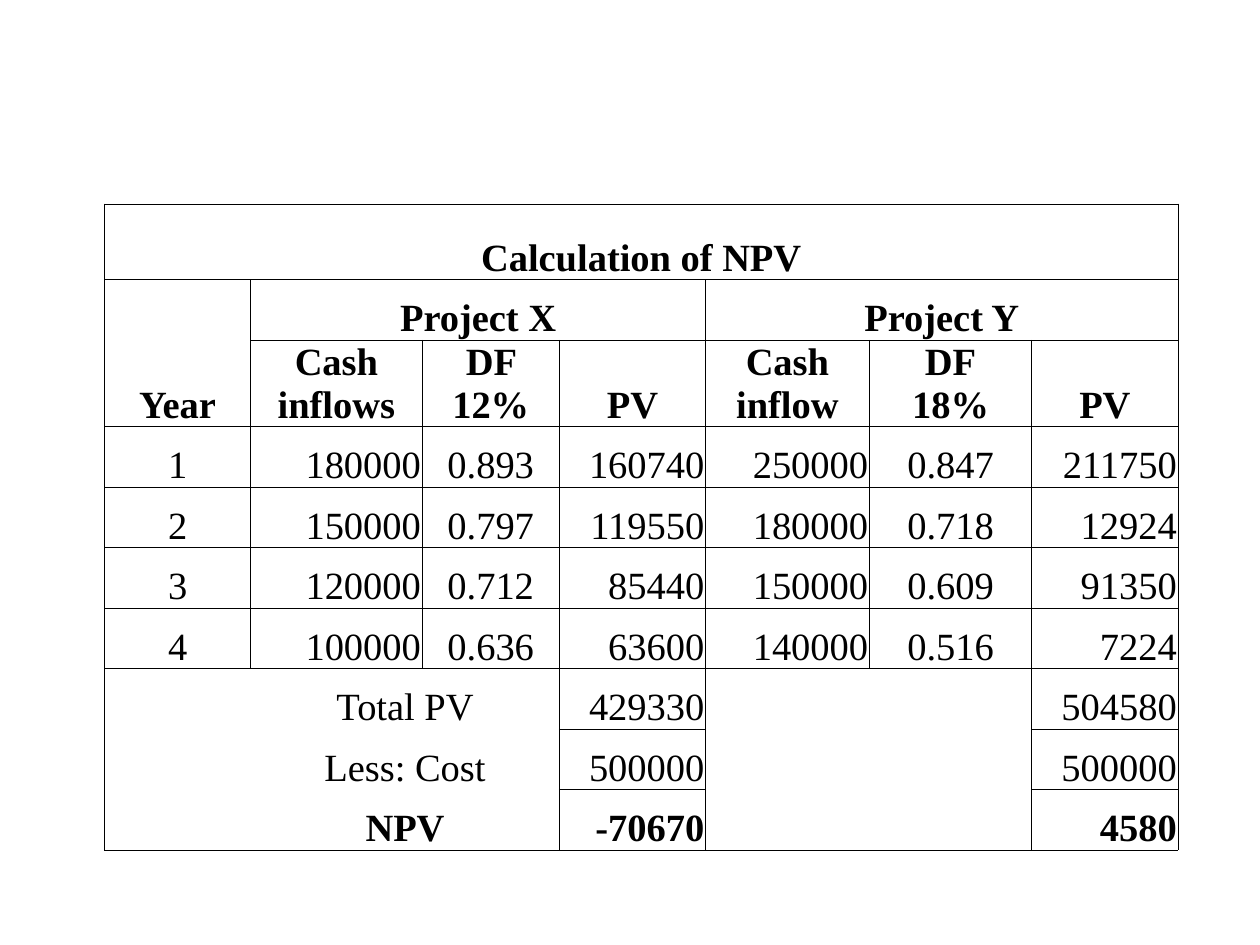
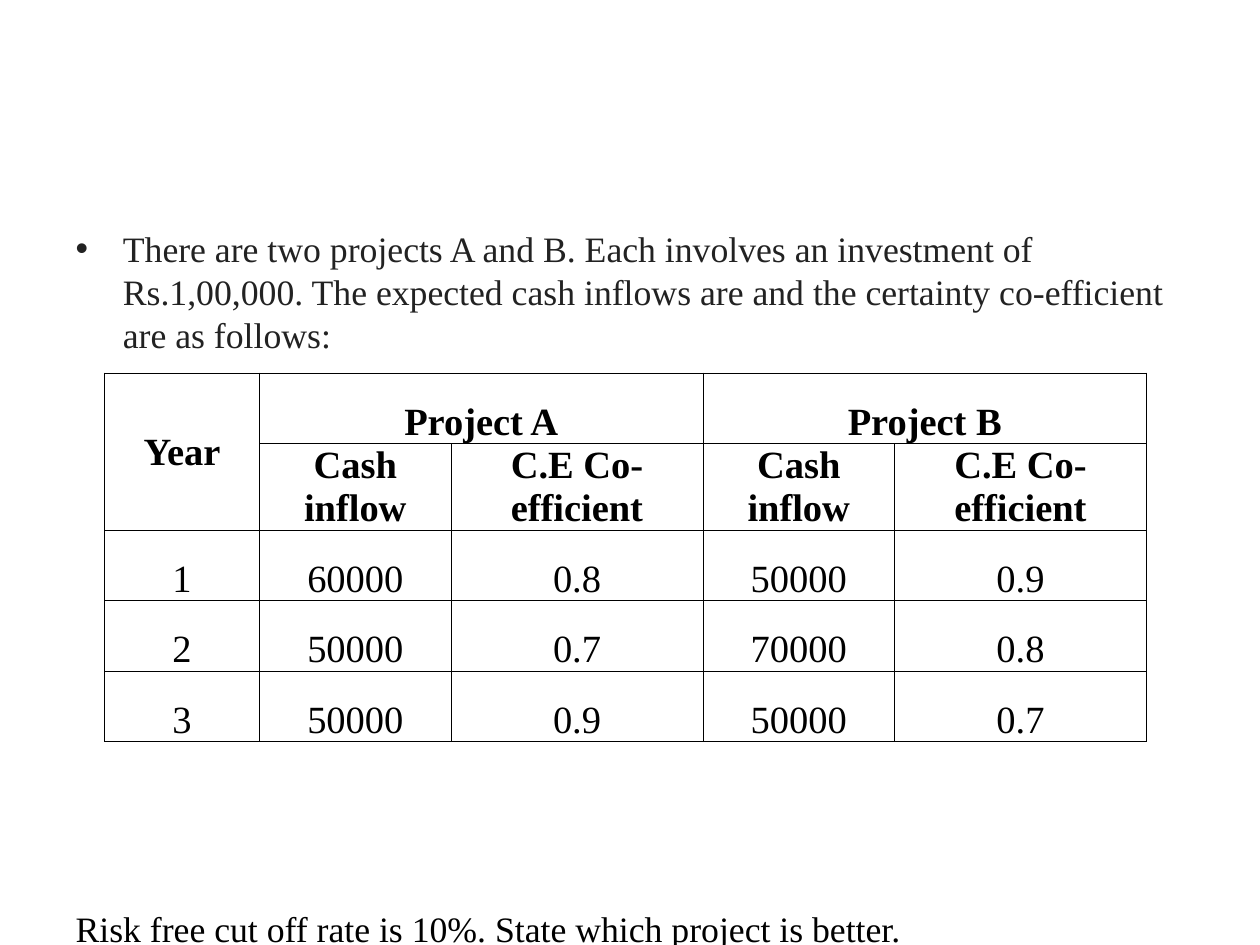
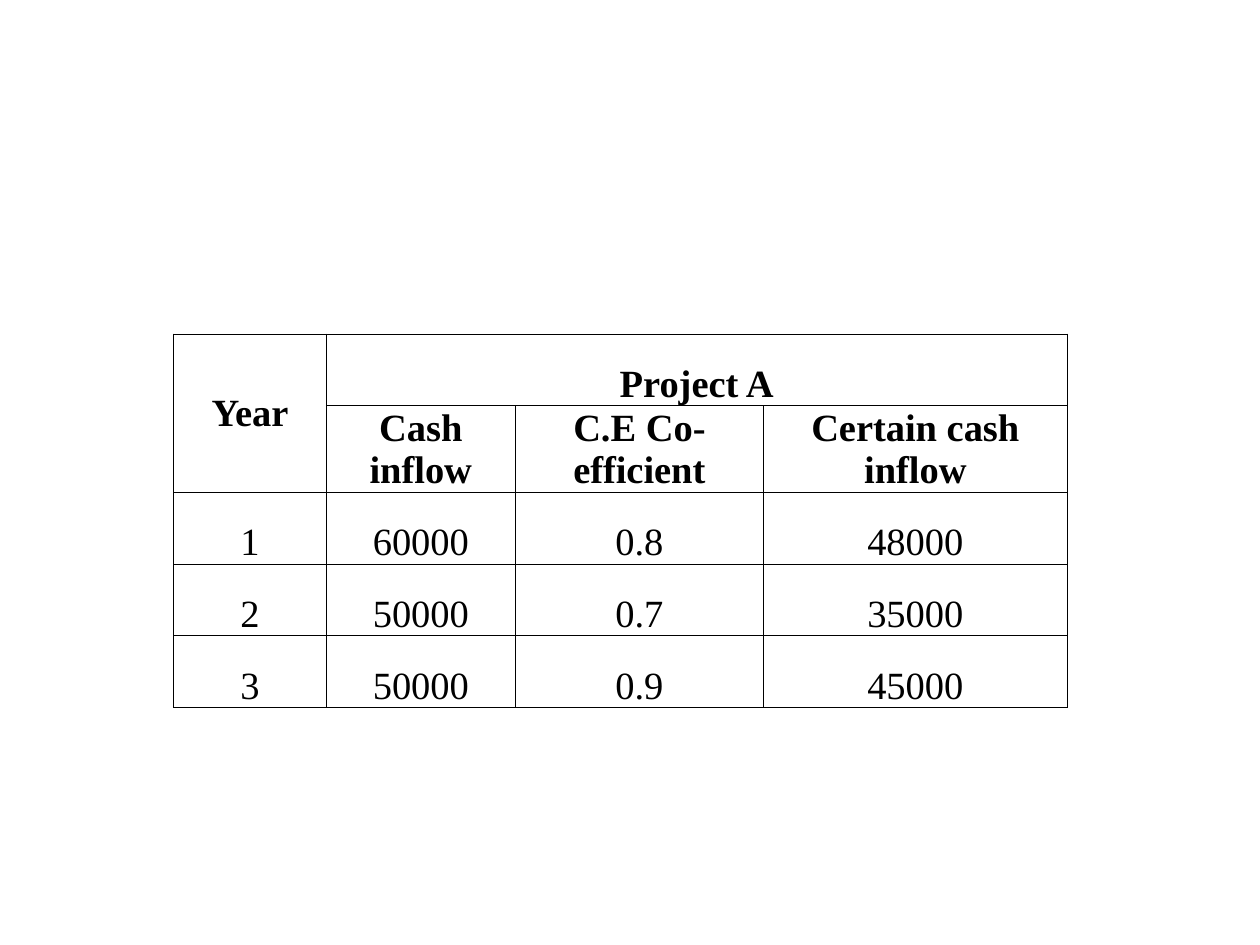
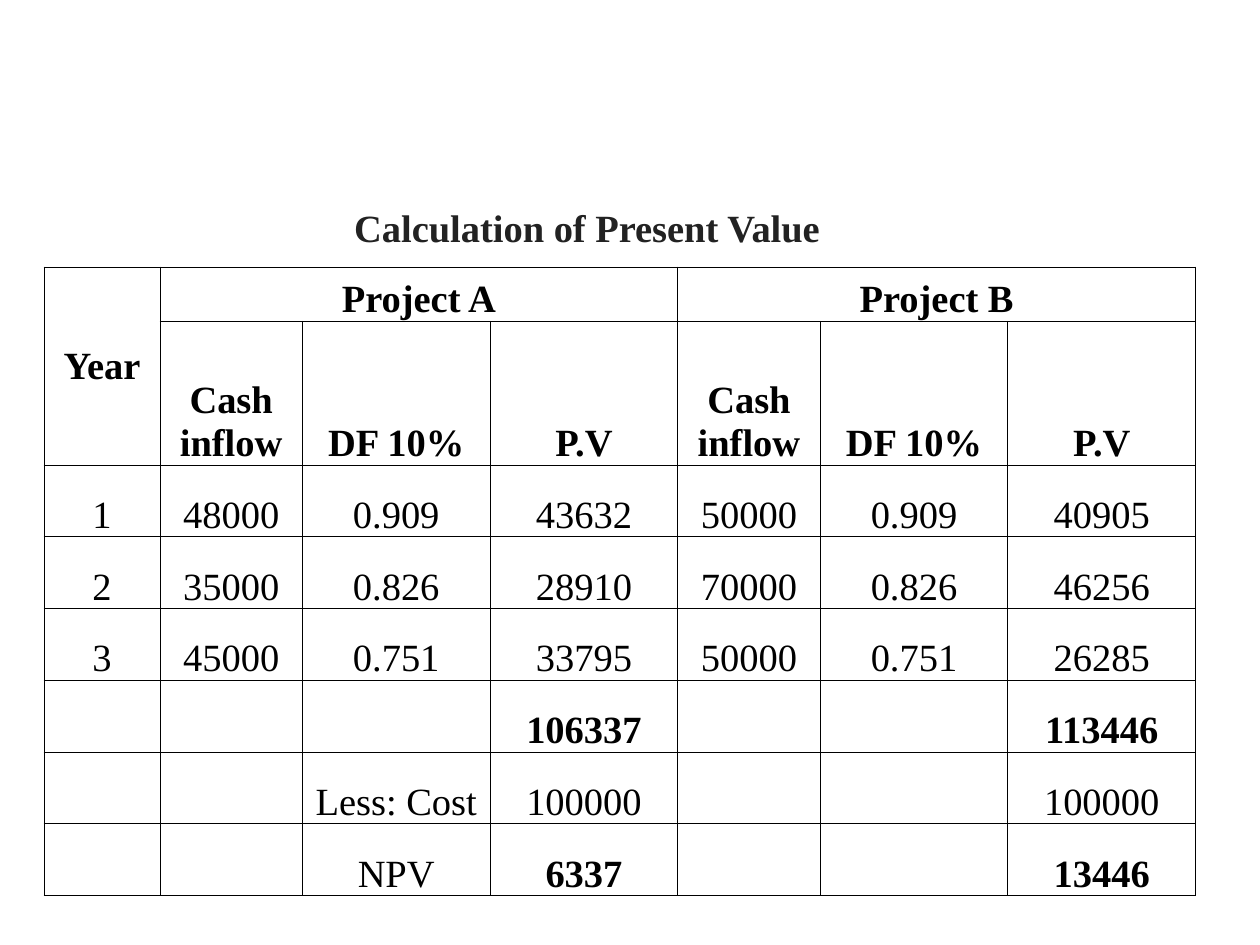
from dataclasses import dataclass

from lxml import etree
from pptx import Presentation
from pptx.dml.color import RGBColor as Rgb
from pptx.enum.text import MSO_ANCHOR as Anchor, MSO_AUTO_SIZE as Fit, PP_ALIGN as Align
from pptx.oxml.ns import qn
from pptx.util import Inches, Pt

COLORS = {"ink": "000000", "soft": "222222"}
FACE = "Times New Roman"
PLAIN_GRID = "{2D5ABB26-0587-4C30-8999-92F81FD0307C}"
PADS = {"margin_left": 0.01, "margin_right": 0.01, "margin_top": 0.01, "margin_bottom": 0}
TITLE_ONLY, CONTENT, BLANK = 5, 1, 6

Block = tuple[int, int, int, int]  # first row, first column, last row, last column


@dataclass
class Grid:
    left: float
    top: float
    cols: list[float]
    rows: list[float]
    text: list[str]
    spans: list[Block]
    head: int = 2
    bold: tuple[tuple[int, int], ...] = ()
    right: tuple[int, ...] = ()
    open: tuple[Block, ...] = ()
    year: Anchor = Anchor.MIDDLE


def style(para, size: float, color: str = "ink", bold: bool = False) -> None:
    values = {"name": FACE, "size": Pt(size), "bold": bold}
    for name, value in values.items():
        setattr(para.font, name, value)
    para.font.color.rgb = Rgb.from_string(COLORS[color])


def place(shape, left: float, top: float, width: float, height: float) -> None:
    box = {"left": left, "top": top, "width": width, "height": height}
    for name, value in box.items():
        setattr(shape, name, Inches(value))
    shape.text_frame.auto_size = Fit.NONE
    shape.text_frame.word_wrap = True


def rule(cell, row: int, col: int, blocks: tuple[Block, ...]) -> None:
    """Draw the cell's edges, save those that lie inside an open block."""
    high = cell.span_height if cell.is_merge_origin else 1
    wide = cell.span_width if cell.is_merge_origin else 1
    sides = {"lnL": (row, col - 1), "lnR": (row, col + wide),
             "lnT": (row - 1, col), "lnB": (row + high, col)}

    def within(spot: tuple[int, int], block: Block) -> bool:
        return block[0] <= spot[0] <= block[2] and block[1] <= spot[1] <= block[3]

    props = cell._tc.get_or_add_tcPr()
    for tag, near in sides.items():
        line = etree.SubElement(props, qn(f"a:{tag}"), w=str(Pt(0.5)))
        if any(within((row, col), b) and within(near, b) for b in blocks):
            etree.SubElement(line, qn("a:noFill"))
        else:
            fill = etree.SubElement(line, qn("a:solidFill"))
            etree.SubElement(fill, qn("a:srgbClr"), val=COLORS["ink"])


def draw(slide, grid: Grid) -> None:
    frame = slide.shapes.add_table(
        len(grid.rows), len(grid.cols), Inches(grid.left), Inches(grid.top),
        Inches(sum(grid.cols)), Inches(sum(grid.rows)))
    table = frame.table
    table.first_row = table.horz_banding = False
    table._tbl.tblPr.find(qn("a:tableStyleId")).text = PLAIN_GRID
    for col, width in zip(table.columns, grid.cols):
        col.width = Inches(width)
    for row, height in zip(table.rows, grid.rows):
        row.height = Inches(height)
    for r0, c0, r1, c1 in grid.spans:
        table.cell(r0, c0).merge(table.cell(r1, c1))
    for r, words in enumerate(grid.text):
        for c, word in enumerate(words.split("|")):
            cell = table.cell(r, c)
            if cell.is_spanned:
                continue
            rule(cell, r, c, grid.open)
            cell.fill.background()
            for name, value in PADS.items():
                setattr(cell, name, Inches(value))
            cell.vertical_anchor = grid.year if word == "Year" else Anchor.BOTTOM
            cell.text = word
            number = word.lstrip("-").isdigit()
            for para in cell.text_frame.paragraphs:
                para.alignment = Align.RIGHT if number and c in grid.right else Align.CENTER
                style(para, 22, bold=r < grid.head or (r, c) in grid.bold)


RISK = Grid(
    0.83, 1.62, [1.16, 1.36, 1.09, 1.16, 1.3, 1.29, 1.16], [0.6] + [0.48] * 9,
    ["Calculation of NPV||||||",
     "Year|Project X|||Project Y||",
     "|Cash inflows|DF 12%|PV|Cash inflow|DF\n18%|PV",
     "1|180000|0.893|160740|250000|0.847|211750",
     "2|150000|0.797|119550|180000|0.718|12924",
     "3|120000|0.712|85440|150000|0.609|91350",
     "4|100000|0.636|63600|140000|0.516|7224",
     "|Total PV||429330|||504580",
     "|Less: Cost||500000|||500000",
     "|NPV||-70670|||4580"],
    [(0, 0, 0, 6), (1, 0, 2, 0), (1, 1, 1, 3), (1, 4, 1, 6)]
    + [(row, 1, row, 2) for row in (7, 8, 9)],
    head=3, bold=((9, 1), (9, 3), (9, 6)), right=(1, 3, 4, 6),
    open=((7, 0, 9, 2), (7, 4, 9, 5)), year=Anchor.BOTTOM)

TASK = Grid(
    0.83, 2.96, [1.23] + [1.52, 2] * 2, [0.56, 0.66] + [0.56] * 3,
    ["Year|Project A||Project B|",
     "|Cash inflow|C.E Co-efficient|Cash inflow|C.E Co-efficient",
     "1|60000|0.8|50000|0.9",
     "2|50000|0.7|70000|0.8",
     "3|50000|0.9|50000|0.7"],
    [(0, 0, 1, 0), (0, 1, 0, 2), (0, 3, 0, 4)])

CERTAIN = Grid(
    1.38, 2.65, [1.21, 1.5, 1.97, 2.41], [0.57] * 5,
    ["Year|Project A||",
     "|Cash inflow|C.E Co-efficient|Certain cash inflow",
     "1|60000|0.8|48000",
     "2|50000|0.7|35000",
     "3|50000|0.9|45000"],
    [(0, 0, 1, 0), (0, 1, 0, 3)])

PRESENT = Grid(
    0.35, 2.12, [0.92] + [1.13, 1.49, 1.49] * 2, [0.43, 1.14] + [0.57] * 6,
    ["Year|Project A|||Project B||",
     "|Cash inflow|DF 10%|P.V|Cash inflow|DF 10%|P.V",
     "1|48000|0.909|43632|50000|0.909|40905",
     "2|35000|0.826|28910|70000|0.826|46256",
     "3|45000|0.751|33795|50000|0.751|26285",
     "|||106337|||113446",
     "||Less: Cost|100000|||100000",
     "||NPV|6337|||13446"],
    [(0, 0, 1, 0), (0, 1, 0, 3), (0, 4, 0, 6)],
    bold=((5, 3), (5, 6), (7, 3), (7, 6)))


def pose(slide) -> None:
    """Write the task above its table and the question below it."""
    title = slide.shapes.title.element
    title.getparent().remove(title)
    body = slide.placeholders[1]
    place(body, 0.5, 1.75, 9, 5.46)
    body.text_frame.text = (
        "There are two projects A and B. Each involves an investment of Rs.1,00,000. "
        "The expected cash inflows are and the certainty co-efficient are as follows:\n"
        "Risk free cut off rate is 10%. State which project is better.")
    task, query = body.text_frame.paragraphs
    for para, color, gap in ((task, "soft", 2), (query, "ink", 315)):
        style(para, 20.4, color)
        para.space_before = Pt(gap)
    props = query._p.get_or_add_pPr()
    for name in ("marL", "indent"):
        props.set(name, "0")
    etree.SubElement(props, qn("a:buNone"))
    props.append(props.find(qn("a:defRPr")))


def head(slide, text: str) -> None:
    title = slide.shapes.title
    place(title, 0.5, 1.55, 8.32, 0.5)
    title.text_frame.text = text
    title.text_frame.vertical_anchor = Anchor.MIDDLE
    para = title.text_frame.paragraphs[0]
    para.alignment = Align.CENTER
    style(para, 22, "soft", True)


def main() -> None:
    deck = Presentation()
    deck.slide_width, deck.slide_height = Inches(10), Inches(7.5)
    plan = ((BLANK, RISK), (CONTENT, TASK), (BLANK, CERTAIN), (TITLE_ONLY, PRESENT))
    for kind, grid in plan:
        slide = deck.slides.add_slide(deck.slide_layouts[kind])
        if kind == CONTENT:
            pose(slide)
        elif kind == TITLE_ONLY:
            head(slide, "Calculation of Present Value")
        draw(slide, grid)
    deck.save("out.pptx")


if __name__ == "__main__":
    main()
